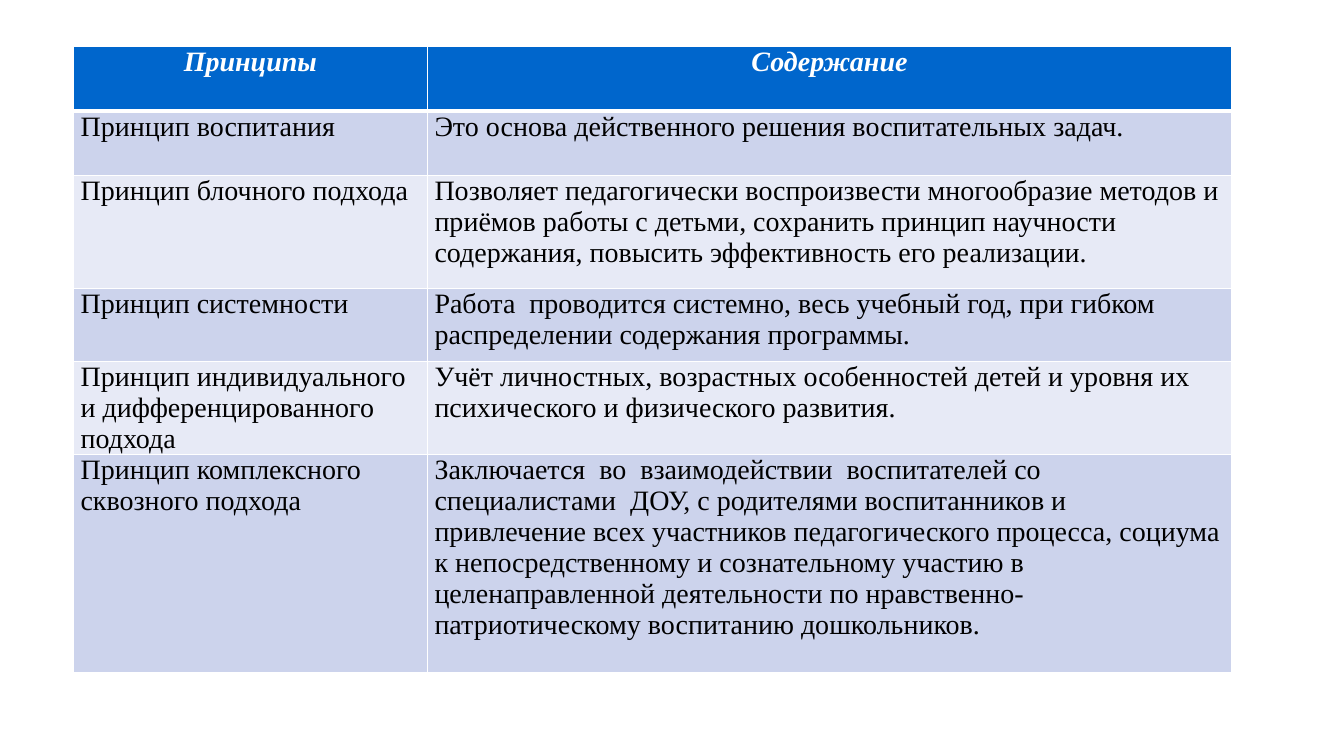
from dataclasses import dataclass

from lxml import etree
from pptx import Presentation
from pptx import util as u
from pptx.dml.color import RGBColor
from pptx.enum import text
from pptx.oxml import ns

COLOURS = {
    "header": "0066CC",
    "odd": "CCD3EC",
    "even": "E7EAF6",
    "border": "FFFFFF",
    "header text": "FFFFFF",
    "body text": "000000",
}
FONT = "Times New Roman"
FONT_SIZE = u.Pt(20)
COLUMN_WIDTHS = (u.Cm(8.92), u.Cm(20.27))
THIN, THICK = u.Pt(1), u.Pt(3)


@dataclass
class Principle:
    name: str
    content: str
    height: u.Cm


ROWS = [
    Principle("Принципы", "Содержание", u.Cm(1.63)),
    Principle(
        "Принцип воспитания",
        "Это основа действенного решения воспитательных задач.",
        u.Cm(1.63),
    ),
    Principle(
        "Принцип блочного подхода",
        "Позволяет педагогически воспроизвести многообразие методов и приёмов "
        "работы с детьми, сохранить принцип научности содержания, повысить "
        "эффективность его реализации.",
        u.Cm(2.84),
    ),
    Principle(
        "Принцип системности",
        "Работа  проводится системно, весь учебный год, при гибком "
        "распределении содержания программы.",
        u.Cm(1.83),
    ),
    Principle(
        "Принцип индивидуального и дифференцированного подхода",
        "Учёт личностных, возрастных особенностей детей и уровня их "
        "психического и физического развития.",
        u.Cm(1.83),
    ),
    Principle(
        "Принцип комплексного сквозного подхода",
        "Заключается  во  взаимодействии  воспитателей со специалистами  ДОУ, "
        "с родителями воспитанников и привлечение всех участников "
        "педагогического процесса, социума к непосредственному и сознательному "
        "участию в целенаправленной деятельности по "
        "нравственно-патриотическому воспитанию дошкольников.",
        u.Cm(5.49),
    ),
]


def colour(name: str) -> RGBColor:
    return RGBColor.from_string(COLOURS[name])


def set_borders(cell, top: int, bottom: int) -> None:
    properties = cell._tc.get_or_add_tcPr()
    widths = {"lnL": THIN, "lnR": THIN, "lnT": top, "lnB": bottom}
    for side, width in widths.items():
        line = etree.SubElement(properties, ns.qn(f"a:{side}"), w=str(int(width)))
        fill = etree.SubElement(line, ns.qn("a:solidFill"))
        etree.SubElement(fill, ns.qn("a:srgbClr"), val=COLOURS["border"])


def fill_cell(cell, words: str, row: int) -> None:
    is_header = row == 0
    set_borders(cell, THICK if row == 1 else THIN, THICK if is_header else THIN)
    cell.fill.solid()
    cell.fill.fore_color.rgb = colour(
        "header" if is_header else "odd" if row % 2 else "even"
    )
    cell.margin_left = cell.margin_right = u.Cm(0.18)
    cell.margin_top = cell.margin_bottom = 0

    para = cell.text_frame.paragraphs[0]
    para.text = words
    para.alignment = text.PP_ALIGN.CENTER if is_header else text.PP_ALIGN.LEFT
    span = para.runs[0]
    span.font.name = FONT
    span.font.size = FONT_SIZE
    span.font.bold = span.font.italic = is_header
    span.font.color.rgb = colour("header text" if is_header else "body text")


def add_principles(page, rows: list[Principle]) -> None:
    frame = page.shapes.add_table(
        len(rows), len(COLUMN_WIDTHS), u.Cm(1.85), u.Cm(1.17),
        sum(COLUMN_WIDTHS), sum(row.height for row in rows),
    )
    table = frame.table
    for column, width in zip(table.columns, COLUMN_WIDTHS):
        column.width = width
    for index, row in enumerate(rows):
        table.rows[index].height = row.height
        for column, words in enumerate((row.name, row.content)):
            fill_cell(table.cell(index, column), words, index)


def main() -> None:
    # Widescreen deck with one blank page
    deck = Presentation()
    deck.slide_width, deck.slide_height = u.Cm(33.87), u.Cm(19.05)
    page = deck.slides.add_slide(deck.slide_layouts[6])

    # Table of principles
    add_principles(page, ROWS)
    deck.save("out.pptx")


if __name__ == "__main__":
    main()
